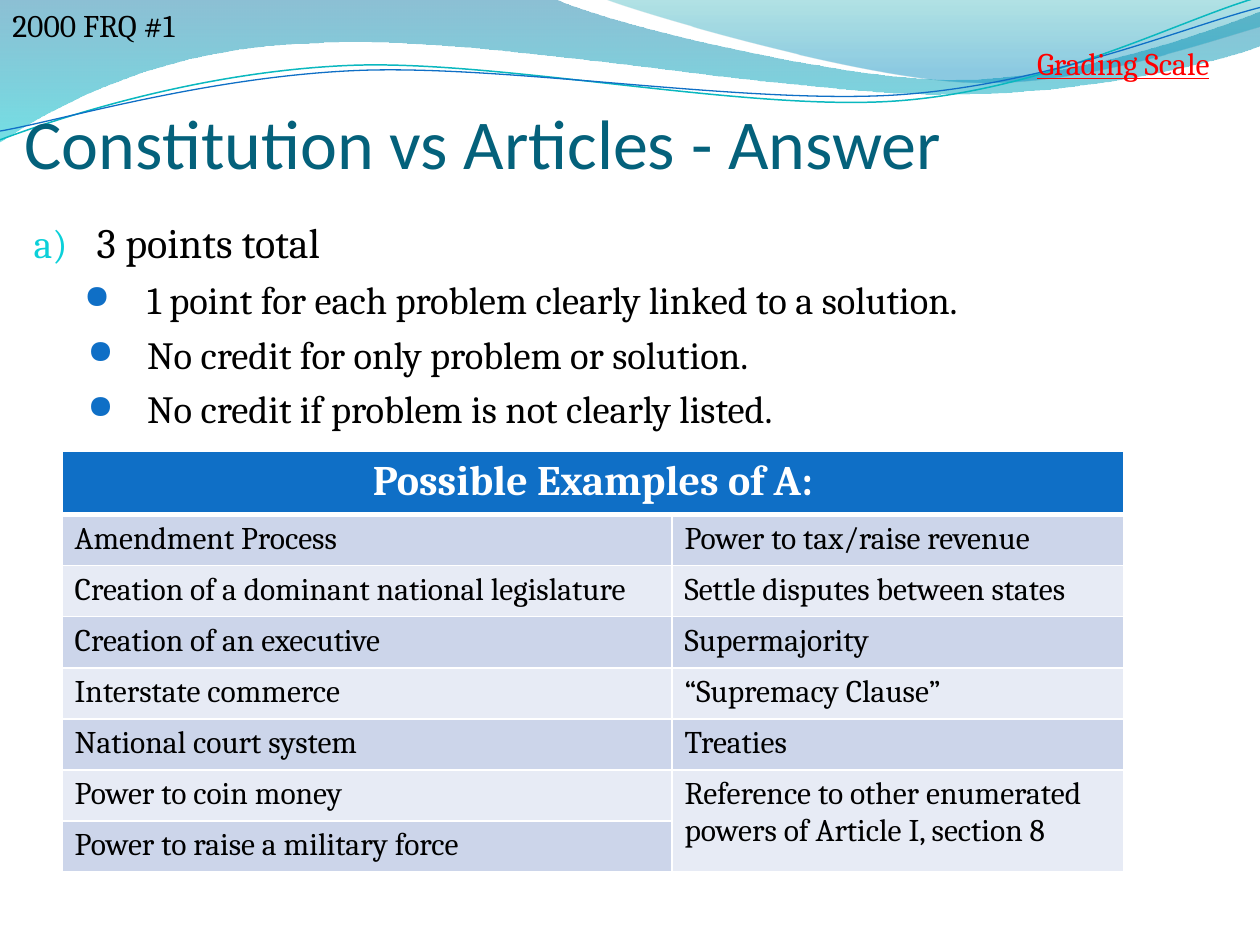
"""Build the answer slide on the Constitution versus the Articles."""
from math import cos, radians, sin
from lxml.etree import SubElement
from pptx import Presentation
from pptx.dml.color import RGBColor
from pptx.enum.text import MSO_ANCHOR, PP_ALIGN
from pptx.oxml.ns import qn
from pptx.util import Pt

COLORS = {
    "title": "04617B", "black": "000000", "white": "FFFFFF", "red": "FF0000",
    "blue": "0F6FC6", "cyan": "0BD0D9", "teal": "0AB8BF",
    "odd row": "CCD5EA", "even row": "E7EBF5",
    "band top": "0074A1", "band bottom": "00C6CF",
    "crest top": "00A1A9", "crest bottom": "008BBF",
}


def write(para, text, color, **font_values):
    span = para.add_run()
    span.text = text
    span.font.color.rgb = RGBColor.from_string(COLORS[color])
    for name, value in font_values.items():
        setattr(span.font, name, value)


def add_text_box(left, top, width, height, **frame_values):
    box = slide.shapes.add_textbox(Pt(left), Pt(top), Pt(width), Pt(height))
    box.text_frame.word_wrap = True
    for name, value in frame_values.items():
        setattr(box.text_frame, name, value)
    return box.text_frame


deck = Presentation()
deck.slide_width, deck.slide_height = Pt(720), Pt(540)
slide = deck.slides.add_slide(deck.slide_layouts[6])

waves = [
    {"start": (0, -0.7), "stops": [("band top", 0, 45), ("band bottom", 1, 55)], "segments": [
        [(316.8, -0.7)],
        [(342.7, 12.2), (478, 45.4), (545.8, 45.4)],
        [(614.2, 45.4), (689.8, 18.7), (720, 6.5)],
        [(720.7, 25.9)],
        [(707.8, 31.7), (626.4, 54.7), (537.1, 54)],
        [(447.8, 54), (275, 20.2), (185, 24.5)],
        [(92.9, 25.9), (33.1, 59.8), (-0.7, 81.4)]]},
    {"start": (344.9, -0.7), "stops": [("crest top", 0, 30), ("crest bottom", 0.8, 45)], "segments": [
        [(366.5, 7.9), (491, 44.6), (553.7, 46.8)],
        [(616.3, 49.7), (691.9, 23), (720, 15.1)],
        [(720, 0)]]},
    {"start": (0, 79.9), "line": ("teal", 0.85), "center": (359.3, 41.4), "segments": [
        [(34.6, 67), (113.8, 41), (199.4, 37.4)],
        [(284.4, 33.8), (427, 64.1), (513.4, 57.6)],
        [(599.8, 51.1), (675.4, 10.8), (718.6, -1.4)]]},
    {"start": (0, 74.9), "line": ("blue", 0.75), "center": (359.6, 42.5), "segments": [
        [(33.8, 69.1), (118.1, 43.9), (203.8, 40.3)],
        [(290.2, 36.7), (429.8, 60.5), (516.2, 54)],
        [(601.9, 47.5), (677.5, 15.1), (720, 4.3)]]},
]
tilt = 2.7
cosine, sine = cos(radians(tilt)), sin(radians(tilt))
for wave in waves:
    points = [wave["start"]] + [point for segment in wave["segments"] for point in segment]
    if "center" in wave:
        middle_x, middle_y = wave["center"]
        points = [(middle_x + (x - middle_x) * cosine - (y - middle_y) * sine,
                   middle_y + (x - middle_x) * sine + (y - middle_y) * cosine) for x, y in points]
    vertices = [(Pt(x), Pt(y)) for x, y in points]
    builder = slide.shapes.build_freeform(*vertices[0])
    builder.add_line_segments(vertices[1:], close="stops" in wave)
    shape = builder.convert_to_shape()
    shape.shadow.inherit = False
    outline = next(shape.element.iter(qn("a:path")))
    lines = iter(outline.findall(qn("a:lnTo")))
    for segment in wave["segments"]:
        first = next(lines)
        if len(segment) == 3:
            curve = SubElement(outline, qn("a:cubicBezTo"))
            first.addprevious(curve)
            for line in (first, next(lines), next(lines)):
                curve.append(line[0])
                outline.remove(line)
    if "line" in wave:
        color, width = wave["line"]
        shape.rotation = 360 - tilt
        shape.fill.background()
        shape.line.color.rgb = RGBColor.from_string(COLORS[color])
        shape.line.width = Pt(width)
        continue
    shape.line.fill.background()
    shape.fill.gradient()
    shape.fill.gradient_angle = 270
    for stop, (color, position, opacity) in zip(shape.fill.gradient_stops, wave["stops"]):
        stop.color.rgb = RGBColor.from_string(COLORS[color])
        stop.position = position
    color_elements = shape.element.spPr.iter(qn("a:srgbClr"))
    for element, (color, position, opacity) in zip(color_elements, wave["stops"]):
        SubElement(element, qn("a:alpha"), val=str(opacity * 1000))

title = add_text_box(0, 40.3, 552.2, 64.8, vertical_anchor=MSO_ANCHOR.BOTTOM,
                     margin_left=0, margin_right=0, margin_bottom=0)
title.paragraphs[0].alignment = PP_ALIGN.CENTER
write(title.paragraphs[0], "Constitution vs Articles - Answer", "title", name="Calibri", size=Pt(40))

body = add_text_box(12.2, 120.2, 689.8, 144)
points_list = [
    ("3 points total", 24, 36, 36, "cyan", 95),
    ("1 point for each problem clearly linked to a solution.", 22, 64.8, 36, "blue", 85),
    ("No credit for only problem or solution.", 22, 64.8, 34, "blue", 85),
    ("No credit if problem is not clearly listed.", 22, 64.8, 34, "blue", 85),
]
for index, (text, size, margin, hanging, bullet_color, bullet_size) in enumerate(points_list):
    para = body.add_paragraph() if index else body.paragraphs[0]
    para.alignment = PP_ALIGN.JUSTIFY
    para.space_before = Pt(5)
    para.level = min(index, 1)
    write(para, text, "black", name="Cambria", size=Pt(size))
    properties = para._p.get_or_add_pPr()
    properties.set("marL", str(Pt(margin)))
    properties.set("indent", str(-Pt(hanging)))
    SubElement(SubElement(properties, qn("a:buClr")), qn("a:srgbClr"), val=COLORS[bullet_color])
    SubElement(properties, qn("a:buSzPct"), val=str(bullet_size * 1000))
    if index:
        SubElement(properties, qn("a:buFont"), typeface="OpenSymbol")
        SubElement(properties, qn("a:buChar"), char="●")
    else:
        SubElement(properties, qn("a:buAutoNum"), type="alphaLcParenR")

grading = add_text_box(563.8, 0, 156.2, 72.7, margin_top=Pt(25))
grading.paragraphs[0].alignment = PP_ALIGN.CENTER
write(grading.paragraphs[0], "Grading Scale", "red", name="Cambria", size=Pt(18), underline=True)

rows = [
    ("Possible Examples of A:", ""),
    ("Amendment Process", "Power to tax/raise revenue"),
    ("Creation of a dominant national legislature", "Settle disputes between states"),
    ("Creation of an executive", "Supermajority"),
    ("Interstate commerce", "“Supremacy Clause”"),
    ("National court system", "Treaties"),
    ("Power to coin money", "Reference to other enumerated powers of Article I, section 8"),
    ("Power to raise a military force", ""),
]
table = slide.shapes.add_table(len(rows), 2, Pt(35.5), Pt(258), Pt(606.6), Pt(239.7)).table
for column, width in zip(table.columns, (348.5, 258.1)):
    column.width = Pt(width)
for row_index, row in enumerate(rows):
    header = row_index == 0
    table.rows[row_index].height = Pt(35.3 if header else 29.2)
    fill_color = "blue" if header else "odd row" if row_index % 2 else "even row"
    for column_index, text in enumerate(row):
        cell = table.cell(row_index, column_index)
        thick_sides = {0: ["a:lnB"], 1: ["a:lnT"]}.get(row_index, [])
        for side in ("a:lnL", "a:lnR", "a:lnT", "a:lnB"):
            border = SubElement(cell._tc.get_or_add_tcPr(), qn(side),
                                w=str(Pt(3 if side in thick_sides else 1)))
            SubElement(SubElement(border, qn("a:solidFill")), qn("a:srgbClr"), val=COLORS["white"])
        cell.fill.solid()
        cell.fill.fore_color.rgb = RGBColor.from_string(COLORS[fill_color])
        if text:
            para = cell.text_frame.paragraphs[0]
            para.alignment = PP_ALIGN.CENTER if header else PP_ALIGN.LEFT
            write(para, text, "white" if header else "black", name="Cambria",
                  size=Pt(24 if header else 18), bold=header)
table.cell(0, 0).merge(table.cell(0, 1))
table.cell(6, 1).merge(table.cell(7, 1))

label = add_text_box(0, 0, 113.8, 28.8)
write(label.paragraphs[0], "2000 FRQ #1", "black", name="Cambria", size=Pt(18))

deck.save("out.pptx")
